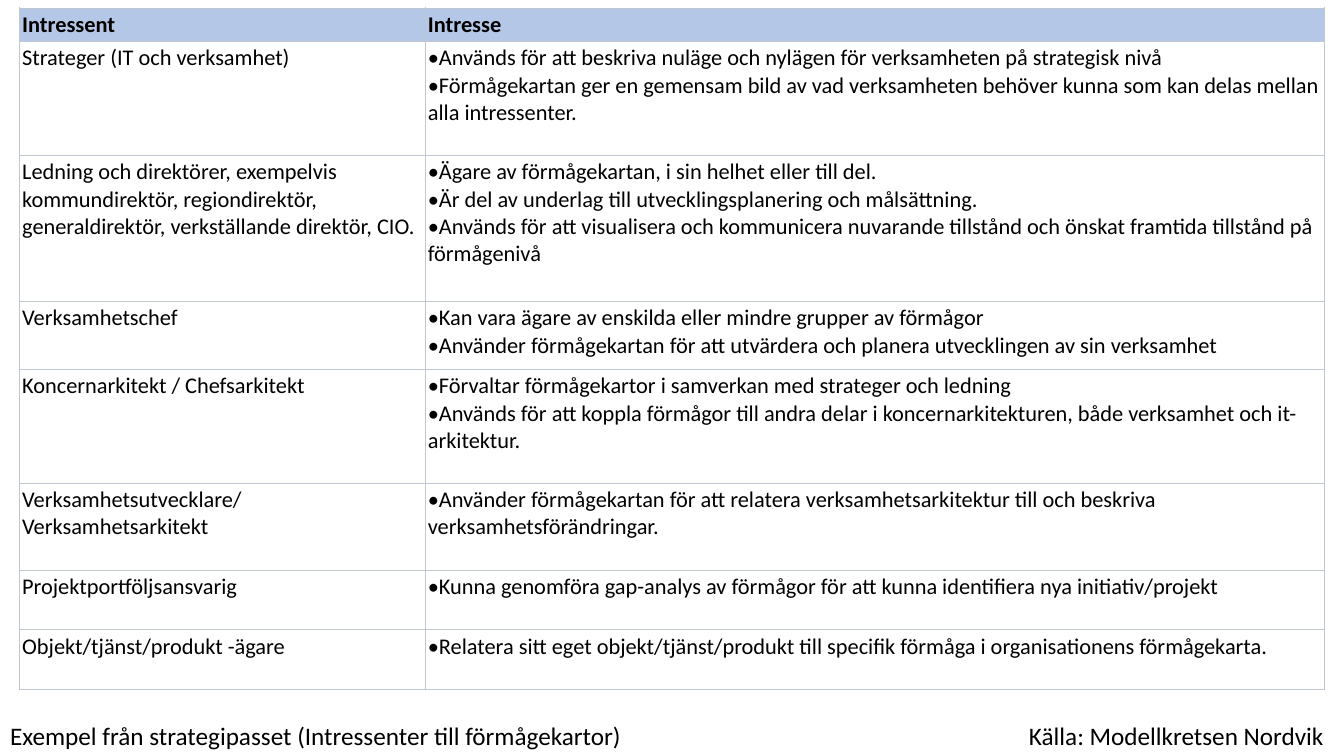
import dataclasses
import typing

import lxml.etree
import pptx
import pptx.dml.color
import pptx.enum.text
import pptx.oxml
import pptx.oxml.ns
import pptx.util

Pt = pptx.util.Pt


@dataclasses.dataclass(frozen=True)
class Theme:
    font: str = "Calibri"
    ink: str = "000000"
    head: str = "B4C7E7"
    paper: str = "FFFFFF"
    rule: str = "C1C7D0"
    rule_size: float = 0.6
    cell_size: float = 16
    note_size: float = 18
    inset: float = 2.16


@dataclasses.dataclass(frozen=True)
class Row:
    height: float
    party: str
    points: tuple[str, ...]


@dataclasses.dataclass(frozen=True)
class Note:
    left: float
    width: float
    text: str


THEME = Theme()
WIDTHS = (289.8, 642.6)
HEAD = Row(24, "Intressent", ("Intresse",))
ROWS = (
    Row(81.4, "Strateger (IT och verksamhet)", (
        "Används för att beskriva nuläge och nylägen för verksamheten på strategisk nivå",
        "Förmågekartan ger en gemensam bild av vad verksamheten behöver kunna "
        "som kan delas mellan alla intressenter.")),
    Row(104.4, "Ledning och direktörer, exempelvis kommundirektör, regiondirektör, "
        "generaldirektör, verkställande direktör, CIO.", (
            "Ägare av förmågekartan, i sin helhet eller till del.",
            "Är del av underlag till utvecklingsplanering och målsättning.",
            "Används för att visualisera och kommunicera nuvarande tillstånd "
            "och önskat framtida tillstånd på förmågenivå")),
    Row(48.4, "Verksamhetschef", (
        "Kan vara ägare av enskilda eller mindre grupper av förmågor",
        "Använder förmågekartan för att utvärdera och planera utvecklingen av sin verksamhet")),
    Row(81.4, "Koncernarkitekt / Chefsarkitekt", (
        "Förvaltar förmågekartor i samverkan med strateger och ledning",
        "Används för att koppla förmågor till andra delar i koncernarkitekturen, "
        "både verksamhet och it-arkitektur.")),
    Row(62, "Verksamhetsutvecklare/ Verksamhetsarkitekt", (
        "Använder förmågekartan för att relatera verksamhetsarkitektur till "
        "och beskriva verksamhetsförändringar.",)),
    Row(42.7, "Projektportföljsansvarig", (
        "Kunna genomföra gap-analys av förmågor för att kunna identifiera "
        "nya initiativ/projekt",)),
    Row(42.7, "Objekt/tjänst/produkt -ägare", (
        "Relatera sitt eget objekt/tjänst/produkt till specifik förmåga "
        "i organisationens förmågekarta.",)),
)
TITLE = Note(0, 498.2, "Exempel från strategipasset (Intressenter till förmågekartor)")
SOURCE = Note(727.9, 256.3, "Källa: Modellkretsen Nordvik")


def paint(hue: str) -> pptx.dml.color.RGBColor:
    return pptx.dml.color.RGBColor.from_string(hue)


def add_run(para: typing.Any, text: str, size: float, bold: bool = False) -> None:
    run = para.add_run()
    run.text = text
    run.font.name = THEME.font
    run.font.size = Pt(size)
    run.font.bold = bold
    run.font.color.rgb = paint(THEME.ink)


def add_dot(para: typing.Any) -> None:
    """Give the paragraph a bullet with no hanging indent."""
    props = para._p.get_or_add_pPr()
    props.set("marL", "0")
    props.set("indent", "0")
    face = lxml.etree.SubElement(props, pptx.oxml.ns.qn("a:buFont"))
    face.set("typeface", THEME.font)
    dot = lxml.etree.SubElement(props, pptx.oxml.ns.qn("a:buChar"))
    dot.set("char", "•")


def add_rules(cell: typing.Any) -> None:
    """Draw all four borders of the cell."""
    props = cell._tc.get_or_add_tcPr()
    for order, side in enumerate("LRTB"):
        props.insert(order, pptx.oxml.parse_xml(
            f'<a:ln{side} {pptx.oxml.ns.nsdecls("a")} w="{Pt(THEME.rule_size)}">'
            f'<a:solidFill><a:srgbClr val="{THEME.rule}"/></a:solidFill></a:ln{side}>'))


def fill_cell(cell: typing.Any, lines: tuple[str, ...], head: bool, dots: bool) -> None:
    cell.margin_left = cell.margin_right = Pt(THEME.inset)
    cell.margin_top = cell.margin_bottom = Pt(THEME.inset)
    cell.fill.solid()
    cell.fill.fore_color.rgb = paint(THEME.head if head else THEME.paper)
    add_rules(cell)
    frame = cell.text_frame
    for order, line in enumerate(lines):
        para = frame.add_paragraph() if order else frame.paragraphs[0]
        if dots:
            add_dot(para)
        add_run(para, line, THEME.cell_size, head)


def add_grid(slide: typing.Any) -> None:
    rows = (HEAD, *ROWS)
    high = sum(row.height for row in rows)
    frame = slide.shapes.add_table(
        len(rows), len(WIDTHS), Pt(13.7), Pt(5.6), Pt(sum(WIDTHS)), Pt(high))
    grid = frame.table
    grid.horz_banding = False
    for col, width in zip(grid.columns, WIDTHS):
        col.width = Pt(width)
    for order, row in enumerate(rows):
        head = row is HEAD
        grid.rows[order].height = Pt(row.height)
        fill_cell(grid.cell(order, 0), (row.party,), head, False)
        fill_cell(grid.cell(order, 1), row.points, head, not head)


def set_note(shape: typing.Any, note: Note) -> None:
    shape.left, shape.top = Pt(note.left), Pt(511.2)
    shape.width, shape.height = Pt(note.width), Pt(28.8)
    frame = shape.text_frame
    frame.word_wrap = True
    frame.auto_size = pptx.enum.text.MSO_AUTO_SIZE.SHAPE_TO_FIT_TEXT
    frame.vertical_anchor = pptx.enum.text.MSO_ANCHOR.TOP
    para = frame.paragraphs[0]
    para.alignment = pptx.enum.text.PP_ALIGN.LEFT
    add_run(para, note.text, THEME.note_size)


def main() -> None:
    deck = pptx.Presentation()
    deck.slide_width, deck.slide_height = Pt(960), Pt(540)
    slide = deck.slides.add_slide(deck.slide_layouts.get_by_name("Title Only"))
    add_grid(slide)
    set_note(slide.shapes.add_textbox(0, 0, 0, 0), SOURCE)
    set_note(slide.shapes.title, TITLE)
    deck.save("out.pptx")


if __name__ == "__main__":
    main()
